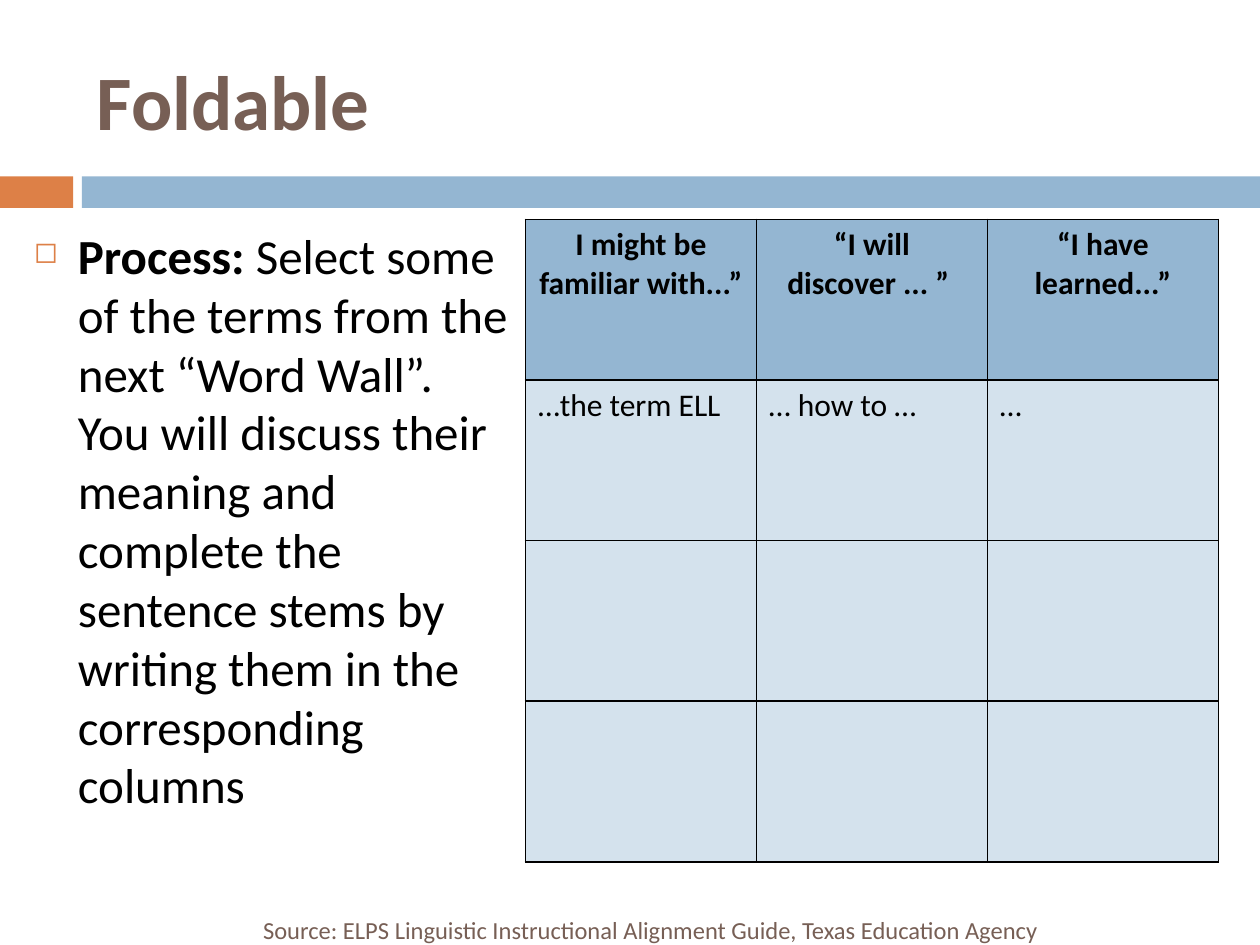
from dataclasses import dataclass

from lxml.etree import SubElement
from pptx import Presentation
from pptx.dml.color import RGBColor
from pptx.enum.shapes import MSO_SHAPE as Shape
from pptx.enum.text import MSO_ANCHOR as Anchor, PP_ALIGN as Align
from pptx.oxml.ns import qn
from pptx.util import Inches, Pt

COLORS = {
    "orange": "DD8047",
    "blue": "94B6D2",
    "pale": "D4E2ED",
    "brown": "775F55",
    "black": "000000",
}
FONT = "Calibri"
ROW_COUNT = 4
TABLE_ROWS = [
    ["I might be familiar with...” ", "“I will discover ... ” ", "“I have learned...”"],
    ["…the term ELL", "… how to …", "…"],
]


@dataclass
class Area:
    left: float
    top: float
    width: float
    height: float

    def lengths(self) -> list:
        return [Inches(n) for n in (self.left, self.top, self.width, self.height)]


@dataclass
class Bar:
    area: Area
    color: str


BARS = [
    Bar(Area(0, 1.4, 0.58, 0.25), "orange"),
    Bar(Area(0.65, 1.4, 9.35, 0.25), "blue"),
]


def rgb(name: str) -> RGBColor:
    return RGBColor.from_string(COLORS[name])


def style(para, size: float, color: str, bold: bool | None = False) -> None:
    font = para.font
    font.name, font.size = FONT, Pt(size)
    font.color.rgb = rgb(color)
    if bold is not None:
        font.bold = bold


def draw_bar(page, bar: Bar) -> None:
    shape = page.shapes.add_shape(Shape.RECTANGLE, *bar.area.lengths())
    shape.shadow.inherit = False
    shape.fill.solid()
    shape.fill.fore_color.rgb = rgb(bar.color)
    shape.line.fill.background()


def add_box(page, area: Area, anchor: Anchor):
    frame = page.shapes.add_textbox(*area.lengths()).text_frame
    frame.word_wrap = True
    frame.vertical_anchor = anchor
    return frame.paragraphs[0]


def add_bullet(para, symbol: str, color: str, percent: int, indent: float) -> None:
    props = para._p.get_or_add_pPr()
    props.set("marL", str(Inches(indent)))
    props.set("indent", str(-Inches(indent)))
    bullet_color = SubElement(props, qn("a:buClr"))
    SubElement(bullet_color, qn("a:srgbClr"), val=COLORS[color])
    SubElement(props, qn("a:buSzPct"), val=str(percent * 1000))
    SubElement(props, qn("a:buChar"), char=symbol)


def add_borders(cell, color: str, width: float) -> None:
    props = cell._tc.get_or_add_tcPr()
    for position, side in enumerate(("lnL", "lnR", "lnT", "lnB")):
        line = props.makeelement(qn(f"a:{side}"), {"w": str(Pt(width))})
        fill = SubElement(line, qn("a:solidFill"))
        SubElement(fill, qn("a:srgbClr"), val=COLORS[color])
        props.insert(position, line)


def draw_table(page, area: Area) -> None:
    column_count = len(TABLE_ROWS[0])
    table = page.shapes.add_table(ROW_COUNT, column_count, *area.lengths()).table
    for row in range(ROW_COUNT):
        is_header = row == 0
        for column in range(column_count):
            cell = table.cell(row, column)
            cell.fill.solid()
            cell.fill.fore_color.rgb = rgb("blue" if is_header else "pale")
            add_borders(cell, "black", 1)
            para = cell.text_frame.paragraphs[0]
            if row < len(TABLE_ROWS):
                para.text = TABLE_ROWS[row][column]
            para.alignment = Align.CENTER if is_header else Align.LEFT
            style(para, 18, "black", is_header)


def main() -> None:
    deck = Presentation()
    deck.slide_width, deck.slide_height = Inches(10), Inches(7.5)
    page = deck.slides.add_slide(deck.slide_layouts[6])

    for bar in BARS:
        draw_bar(page, bar)

    title = add_box(page, Area(0.67, 0.25, 8.92, 1.08), Anchor.MIDDLE)
    title.text = "Foldable"
    style(title, 44, "brown", True)

    process = add_box(page, Area(0.17, 1.74, 4.08, 5), Anchor.TOP)
    add_bullet(process, "◻", "orange", 60, 0.35)
    label = process.add_run()
    label.text = "Process: "
    label.font.bold = True
    span = process.add_run()
    span.text = (
        "Select some of the terms from the next “Word Wall”.  You will discuss "
        "their meaning and complete the sentence stems by writing them in the "
        "corresponding columns"
    )
    style(process, 28, "black", None)

    draw_table(page, Area(4.17, 1.74, 5.5, 5.1))

    source = add_box(page, Area(1.67, 7.18, 6.67, 0.4), Anchor.MIDDLE)
    source.text = (
        "Source: ELPS Linguistic Instructional Alignment Guide, Texas Education Agency"
    )
    source.alignment = Align.RIGHT
    style(source, 14, "brown")

    deck.save("out.pptx")


if __name__ == "__main__":
    main()
